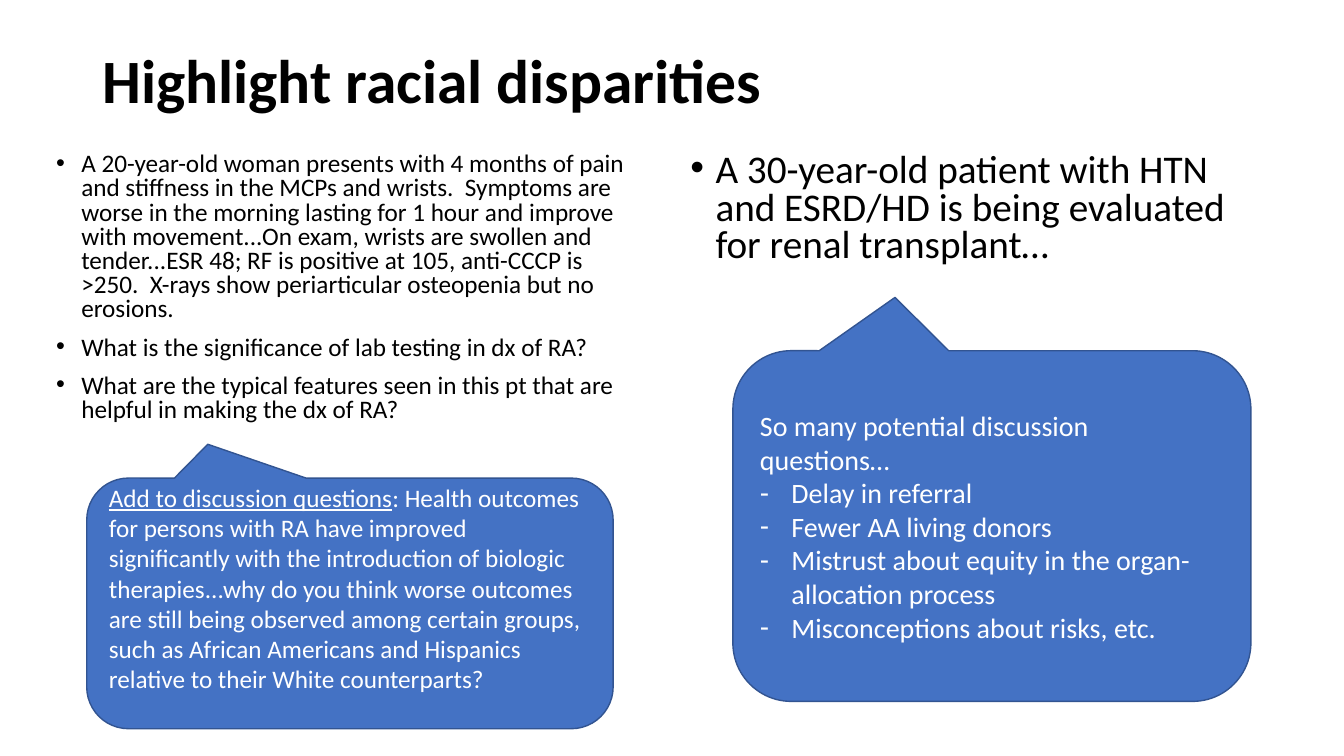
import pptx
import pptx.dml.color
import pptx.enum.shapes
import pptx.enum.text
import pptx.oxml.ns
import pptx.util
from lxml import etree

Pt = pptx.util.Pt
ANCHOR = pptx.enum.text.MSO_ANCHOR
COLOURS = {"text": "000000", "callout": "4472C4", "outline": "325491", "callout_text": "FFFFFF"}
FONT = "Calibri"

CASE_ARTHRITIS = [
    "A 20-year-old woman presents with 4 months of pain and stiffness in the MCPs and wrists.  "
    "Symptoms are worse in the morning lasting for 1 hour and improve with movement...On exam, "
    "wrists are swollen and tender...ESR 48; RF is positive at 105, anti-CCCP is >250.  "
    "X-rays show periarticular osteopenia but no erosions.",
    "What is the significance of lab testing in dx of RA?",
    "What are the typical features seen in this pt that are helpful in making the dx of RA?",
]
CASE_TRANSPLANT = [
    "A 30-year-old patient with HTN and ESRD/HD is being evaluated for renal transplant…",
]
QUESTION_LEAD = "Add to discussion questions"
QUESTION = (
    ": Health outcomes for persons with RA have improved significantly with the introduction of "
    "biologic therapies...why do you think worse outcomes are still being observed among certain "
    "groups, such as African Americans and Hispanics relative to their White counterparts?"
)
BARRIERS_LEAD = "So many potential discussion questions…"
BARRIERS = [
    "Delay in referral",
    "Fewer AA living donors",
    "Mistrust about equity in the organ-allocation process",
    "Misconceptions about risks, etc.",
]


def rgb(name):
    return pptx.dml.color.RGBColor.from_string(COLOURS[name])


def add_span(para, text, size, colour="text", bold=False, underline=False):
    span = para.add_run()
    span.text = text
    span.font.name = FONT
    span.font.size = Pt(size)
    span.font.bold = bold
    span.font.underline = underline
    span.font.color.rgb = rgb(colour)


def next_para(frame):
    """Return the empty first paragraph, or a new one after the last."""
    first = frame.paragraphs[0]
    para = first if not first.runs else frame.add_paragraph()
    para.alignment = pptx.enum.text.PP_ALIGN.LEFT
    return para


def add_text(frame, text, line_spacing=None, space_before=0, bullet=None, indent=0, **style):
    para = next_para(frame)
    para.line_spacing = line_spacing
    para.space_before = Pt(space_before)
    if bullet:
        properties = para._p.get_or_add_pPr()
        properties.set("marL", str(Pt(indent)))
        properties.set("indent", str(-Pt(indent)))
        font = etree.SubElement(properties, pptx.oxml.ns.qn("a:buFont"))
        font.set("typeface", "Arial")
        mark = etree.SubElement(properties, pptx.oxml.ns.qn("a:buChar"))
        mark.set("char", bullet)
    add_span(para, text, **style)
    return para


def add_text_frame(page, left, top, width, height, anchor=ANCHOR.TOP):
    box = page.shapes.add_textbox(Pt(left), Pt(top), Pt(width), Pt(height))
    frame = box.text_frame
    frame.word_wrap = True
    frame.vertical_anchor = anchor
    return frame


def add_case(page, left, top, width, height, items, size):
    frame = add_text_frame(page, left, top, width, height)
    for item in items:
        add_text(frame, item, line_spacing=0.8, space_before=10, bullet="•", indent=18, size=size)


def add_callout(page, left, top, width, height, tip):
    """Add a rounded callout; tip is the pointer's offset from its centre, as shares of its size."""
    kind = pptx.enum.shapes.MSO_SHAPE.ROUNDED_RECTANGULAR_CALLOUT
    callout = page.shapes.add_shape(kind, Pt(left), Pt(top), Pt(width), Pt(height))
    callout.shadow.inherit = False
    callout.adjustments[0], callout.adjustments[1] = tip
    callout.fill.solid()
    callout.fill.fore_color.rgb = rgb("callout")
    callout.line.color.rgb = rgb("outline")
    callout.line.width = Pt(1)
    frame = callout.text_frame
    frame.word_wrap = True
    frame.vertical_anchor = ANCHOR.MIDDLE
    return frame


def main():
    deck = pptx.Presentation()
    deck.slide_width, deck.slide_height = Pt(960), Pt(540)
    page = deck.slides.add_slide(deck.slide_layouts[6])

    title = add_text_frame(page, 66, 28.8, 828, 62, anchor=ANCHOR.MIDDLE)
    add_text(title, "Highlight racial disparities", line_spacing=0.9, size=44, bold=True)

    add_case(page, 33, 106, 433, 220, CASE_ARTHRITIS, size=18)
    add_case(page, 486, 106, 400, 105, CASE_TRANSPLANT, size=28)

    question = add_callout(page, 62, 341.5, 376, 179, tip=(-0.27, -0.635))
    question.margin_bottom = Pt(25.6)
    para = add_text(question, QUESTION_LEAD, size=18, colour="callout_text", underline=True)
    add_span(para, QUESTION, size=18, colour="callout_text")

    barriers = add_callout(page, 523.5, 250.5, 370, 250.5, tip=(-0.187, -0.652))
    add_text(barriers, BARRIERS_LEAD, size=20, colour="callout_text")
    for barrier in BARRIERS:
        add_text(barriers, barrier, bullet="-", indent=22.5, size=20, colour="callout_text")

    deck.save("out.pptx")


if __name__ == "__main__":
    main()
